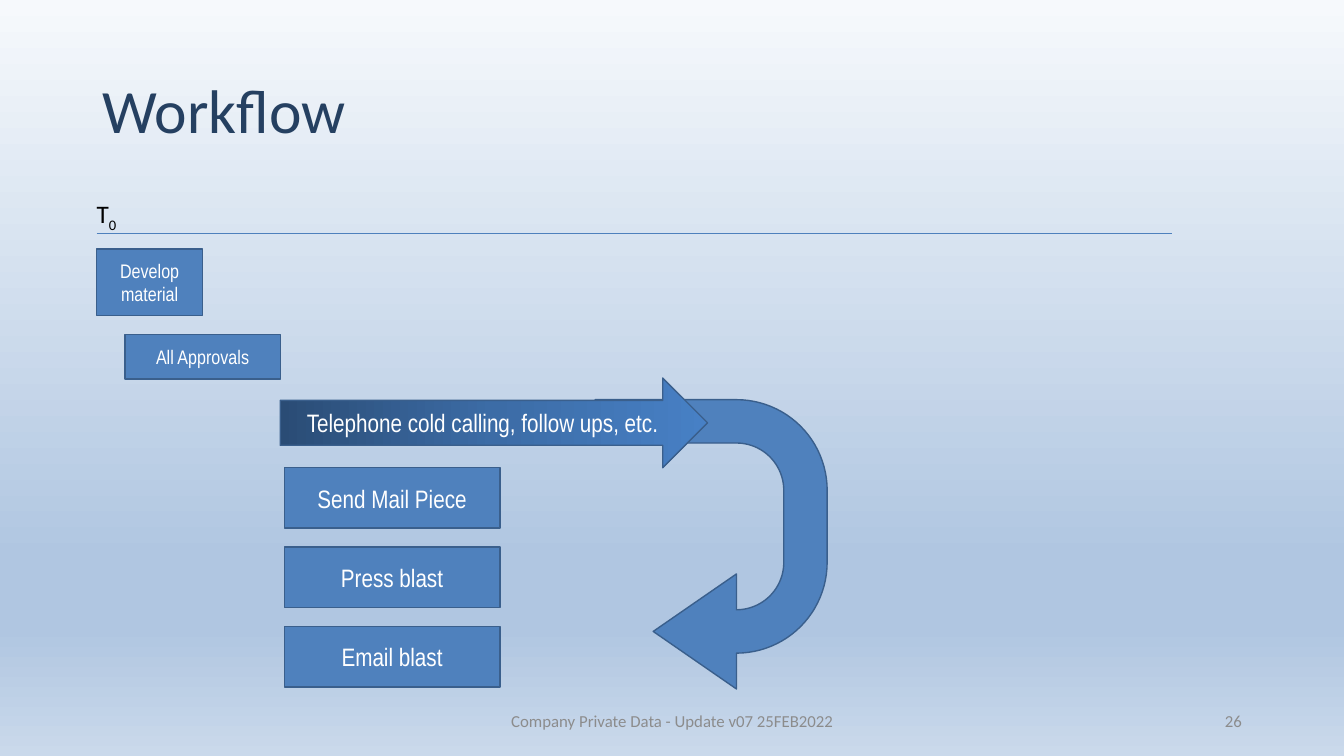
import copy
import pptx
import pptx.util
import pptx.dml.color
import pptx.enum.shapes
import pptx.enum.text
import pptx.oxml.ns
import lxml.etree

WIDE, HIGH = 13.33, 7.5
BLUE, EDGE, GREY = "4F81BD", "3A5F8C", "8C8C8C"
KIND = pptx.enum.shapes.MSO_SHAPE
ALIGN = pptx.enum.text.PP_ALIGN
MID = pptx.enum.text.MSO_ANCHOR.MIDDLE
TOP = pptx.enum.text.MSO_ANCHOR.TOP


def color(code):
    return pptx.dml.color.RGBColor.from_string(code)


def across(share):
    return pptx.util.Inches(WIDE * share / 100)


def down(share):
    return pptx.util.Inches(HIGH * share / 100)


def place(left, top, width, height):
    return across(left), down(top), across(width), down(height)


def write(shape, text, size=18, font="Arial Narrow", ink="FFFFFF",
          align=ALIGN.CENTER, anchor=MID, wrap=True, space=None, sub=None):
    frame = shape.text_frame
    frame.word_wrap = wrap
    frame.vertical_anchor = anchor
    para = frame.paragraphs[0]
    para.alignment = align
    para.line_spacing = space
    for part in filter(None, (text, sub)):
        run = para.add_run()
        run.text = part
        run.font.size = pptx.util.Pt(size)
        run.font.name = font
        run.font.color.rgb = color(ink)
    if sub:
        run.font._element.set("baseline", "-25000")


def grade(root, fill, stops, angle):
    fill.gradient()
    fill.gradient_angle = angle
    group = root.find(".//" + pptx.oxml.ns.qn("a:gsLst"))
    while len(group) < len(stops):
        group.append(copy.deepcopy(group[0]))
    for stop, (share, code) in zip(fill.gradient_stops, stops):
        stop.position = share / 100
        stop.color.rgb = color(code)


def label(slide, area, text, **style):
    write(slide.shapes.add_textbox(*place(*area)), text, font="Calibri", **style)


def block(slide, kind, area, text=None, size=18):
    shape = slide.shapes.add_shape(kind, *place(*area))
    shape.shadow.inherit = False
    shape.fill.solid()
    shape.fill.fore_color.rgb = color(BLUE)
    shape.line.color.rgb = color(EDGE)
    shape.line.width = pptx.util.Pt(1)
    if text:
        write(shape, text, size=size)
    return shape


def rule(slide, start, end, row):
    line = slide.shapes.add_connector(
        pptx.enum.shapes.MSO_CONNECTOR.STRAIGHT,
        across(start), down(row), across(end), down(row))
    line.line.color.rgb = color(BLUE)
    line.line.width = pptx.util.Pt(0.5)
    lxml.etree.SubElement(line.element.spPr, pptx.oxml.ns.qn("a:effectLst"))


def main():
    deck = pptx.Presentation()
    deck.slide_width, deck.slide_height = across(100), down(100)
    slide = deck.slides.add_slide(deck.slide_layouts[6])
    grade(slide.element, slide.background.fill,
          [(0, "F6F9FC"), (74, "B0C6E1"), (83, "B0C6E1"), (100, "CAD9EB")], 270)

    turn = block(slide, KIND.U_TURN_ARROW, (42.15, 56.67, 21.53, 30.67))
    turn.rotation = 90
    for spot, share in enumerate((0.187, 0.248, 0.359, 0.438, 0.75)):
        turn.adjustments[spot] = share

    label(slide, (6.9, 5.33, 86.25, 19.33), "Workflow", size=44, ink="254061",
          align=ALIGN.LEFT, space=0.9)
    label(slide, (33.15, 92.67, 33.75, 5.33),
          "Company Private Data - Update v07 25FEB2022", size=12, ink=GREY)
    label(slide, (70.65, 92.67, 22.5, 5.33), "26", size=12, ink=GREY,
          align=ALIGN.RIGHT)

    rule(slide, 7.2, 87.22, 30.93)
    label(slide, (6.45, 25.6, 3.3, 5.33), "T", sub="0", ink="000000",
          align=ALIGN.LEFT, anchor=TOP, wrap=False)

    for row, text in enumerate(("Send Mail Piece", "Press blast", "Email blast")):
        block(slide, KIND.RECTANGLE, (21.15, 61.87 + 10.5 * row, 16.05, 8), text)
    block(slide, KIND.RECTANGLE, (7.2, 32.93, 7.88, 8.8), "Develop material", 14)
    block(slide, KIND.RECTANGLE, (9.3, 44.27, 11.55, 5.87), "All Approvals", 14)

    call = block(slide, KIND.RIGHT_ARROW, (20.85, 50, 31.8, 11.87),
                 "Telephone cold calling, follow ups, etc.")
    grade(call.element, call.fill,
          [(0, "2A4C75"), (50, "3C6CA6"), (100, "4780C5")], 0)

    deck.save("out.pptx")


if __name__ == "__main__":
    main()
